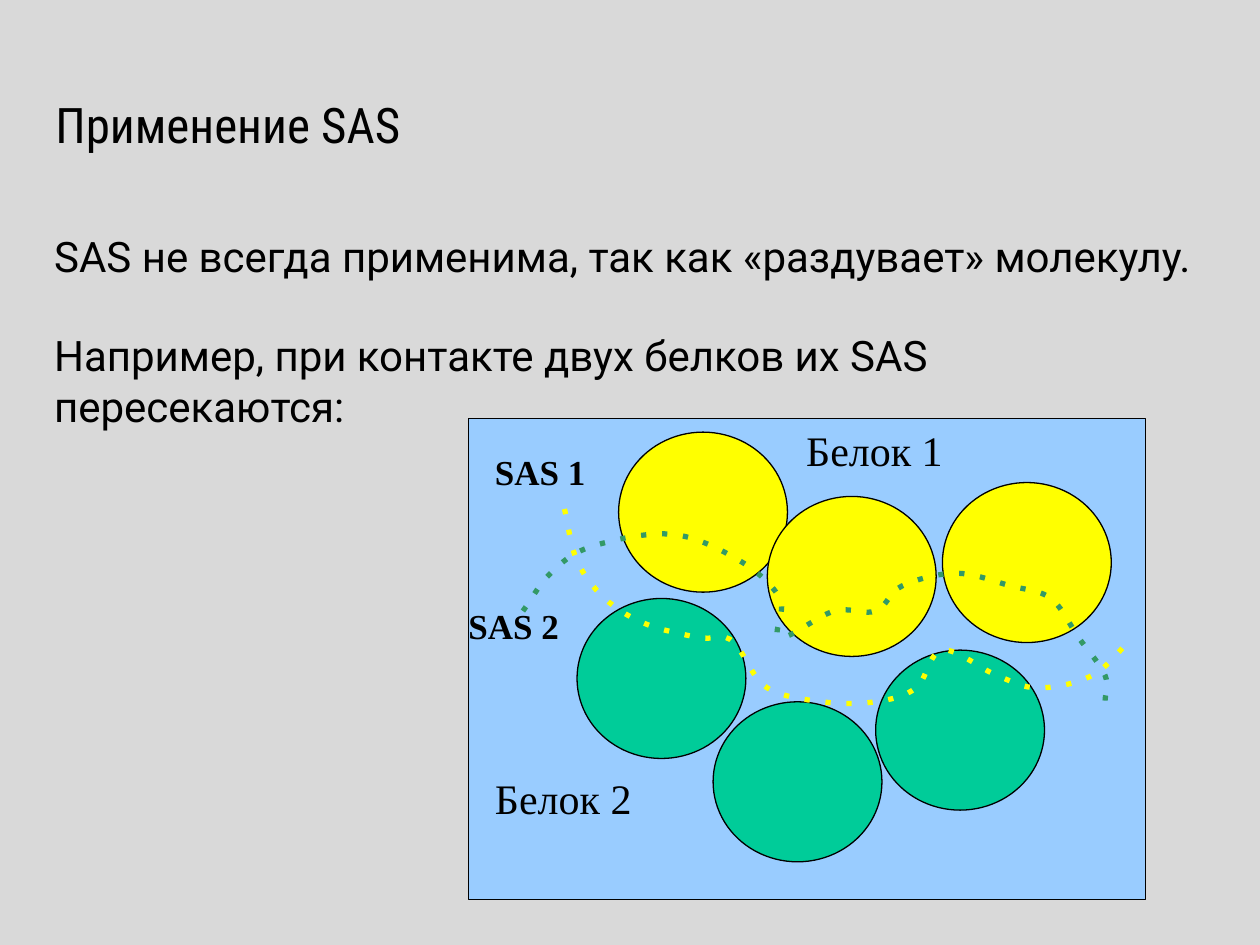
from lxml import etree
from pptx import Presentation
from pptx.dml.color import RGBColor
from pptx.enum.shapes import MSO_SHAPE
from pptx.enum.text import MSO_ANCHOR, MSO_AUTO_SIZE, PP_ALIGN
from pptx.oxml.ns import qn
from pptx.util import Inches, Pt

OVAL, RECTANGLE = MSO_SHAPE.OVAL, MSO_SHAPE.RECTANGLE
TOP, LEFT, NO_FIT = MSO_ANCHOR.TOP, PP_ALIGN.LEFT, MSO_AUTO_SIZE.NONE

COLORS = {
    "background": "D9D9D9",
    "text": "000000",
    "panel": "99CCFF",
    "protein 1": "FFFF00",
    "protein 2": "00CC99",
    "SAS 1": "FFFF00",
    "SAS 2": "339966",
}

# Diagram parts, in inches from the panel's corner
ATOM_SIZE = (1.34, 1.27)
ATOMS = [
    ("protein 2", [(0.86, 1.43), (3.23, 1.84), (1.94, 2.25)]),
    ("protein 1", [(1.19, 0.11), (2.37, 0.62), (3.76, 0.51)]),
]
SURFACES = [
    ("SAS 2", [(0.43, 1.53), (0.65, 1.23), (0.97, 1.02), (1.61, 0.92),
               (2.15, 1.13), (2.47, 1.43), (2.47, 1.74), (2.9, 1.53),
               (3.23, 1.53), (3.44, 1.33), (3.87, 1.23), (4.3, 1.33),
               (4.62, 1.43), (4.84, 1.74), (5.05, 2.04), (5.05, 2.25)]),
    ("SAS 1", [(0.76, 0.72), (0.86, 1.13), (1.08, 1.43), (1.4, 1.63),
               (1.83, 1.74), (2.04, 1.74), (2.15, 1.84), (2.37, 2.14),
               (2.8, 2.25), (3.23, 2.25), (3.55, 2.14), (3.76, 1.84),
               (4.19, 2.04), (4.52, 2.14), (4.95, 2.04), (5.27, 1.74)]),
]
LABELS = [
    ("Белок 1", 2.58, 0, 24, False),
    ("Белок 2", 0.11, 2.76, 24, False),
    ("SAS 1", 0.11, 0.21, 20, True),
    ("SAS 2", -0.1, 1.43, 20, True),
]


def color(name):
    return RGBColor.from_string(COLORS[name])


def place(shape, left, top, width, height):
    shape.left, shape.top = Inches(left), Inches(top)
    shape.width, shape.height = Inches(width), Inches(height)


def add_span(para, text, font, size, bold=False):
    span = para.add_run()
    span.text = text
    span.font.name = font
    span.font.size = Pt(size)
    span.font.bold = bold
    span.font.color.rgb = color("text")


def set_frame(frame, margin, wrap=True):
    frame.word_wrap = wrap
    frame.auto_size = NO_FIT
    frame.vertical_anchor = TOP
    frame.margin_left = frame.margin_right = Inches(0.1)
    frame.margin_top = frame.margin_bottom = Inches(margin)


def add_title(page, left, top, width, height):
    title = page.shapes.title
    place(title, left, top, width, height)
    set_frame(title.text_frame, 0.1)
    para = title.text_frame.paragraphs[0]
    para.alignment = LEFT
    add_span(para, "Применение SAS", "Roboto Condensed", 28)


def add_body(page, left, top, width, height, texts):
    body = page.placeholders[1]
    place(body, left, top, width, height)
    frame = body.text_frame
    set_frame(frame, 0.05)
    for index, text in enumerate(texts):
        para = frame.add_paragraph() if index else frame.paragraphs[0]
        para.alignment = LEFT
        para.space_before = Pt(28 if index else 0)
        properties = para._p.get_or_add_pPr()
        properties.set("marL", "0")
        properties.set("indent", "0")
        etree.SubElement(properties, qn("a:buNone"))
        add_span(para, text, "Roboto", 24)


def add_filled(group, kind, fill, left, top, width, height):
    shape = group.shapes.add_shape(
        kind, Inches(left), Inches(top), Inches(width), Inches(height))
    shape.shadow.inherit = False
    shape.fill.solid()
    shape.fill.fore_color.rgb = color(fill)
    shape.line.color.rgb = color("text")
    shape.line.width = Pt(0.75)


def smooth_path(shape, knots):
    """Turn straight segments into a Catmull-Rom curve through the knots."""
    def mirror(end, inner):
        return tuple(2 * a - b for a, b in zip(end, inner))

    chain = [mirror(knots[0], knots[1]), *knots, mirror(knots[-1], knots[-2])]
    segments = list(shape._element.iter(qn("a:lnTo")))
    for index, segment in enumerate(segments):
        before, start, end, after = chain[index:index + 4]
        first = [s + (e - b) / 6 for b, s, e in zip(before, start, end)]
        second = [e - (a - s) / 6 for s, e, a in zip(start, end, after)]
        curve = etree.Element(qn("a:cubicBezTo"))
        for x, y in (first, second, end):
            etree.SubElement(curve, qn("a:pt"), x=str(int(x - shape.left)),
                             y=str(int(y - shape.top)))
        segment.getparent().replace(segment, curve)


def add_surface(group, name, left, top, points):
    knots = [(Inches(left + x), Inches(top + y)) for x, y in points]
    builder = group.shapes.build_freeform(*knots[0])
    builder.add_line_segments(knots[1:], close=False)
    shape = builder.convert_to_shape()
    smooth_path(shape, knots)
    shape.shadow.inherit = False
    shape.fill.background()
    shape.line.color.rgb = color(name)
    shape.line.width = Pt(3)
    line = shape._element.spPr.find(qn("a:ln"))
    etree.SubElement(line, qn("a:prstDash"), val="dot")


def add_label(group, text, left, top, size, bold):
    box = group.shapes.add_textbox(
        Inches(left), Inches(top), Inches(1.34), Inches(0.64))
    set_frame(box.text_frame, 0.05, wrap=False)
    para = box.text_frame.paragraphs[0]
    para.alignment = LEFT
    add_span(para, text, "Times New Roman", size, bold)


def add_diagram(page, left, top, width, height):
    group = page.shapes.add_group_shape()
    add_filled(group, RECTANGLE, "panel", left, top, width, height)
    # Atoms of the two proteins
    for protein, corners in ATOMS:
        for x, y in corners:
            add_filled(group, OVAL, protein, left + x, top + y, *ATOM_SIZE)
    # Dotted accessible surfaces
    for name, points in SURFACES:
        add_surface(group, name, left, top, points)
    for text, x, y, size, bold in LABELS:
        add_label(group, text, left + x, top + y, size, bold)


def main():
    deck = Presentation()
    deck.slide_width, deck.slide_height = Inches(10), Inches(7.5)
    page = deck.slides.add_slide(deck.slide_layouts[1])
    page.background.fill.solid()
    page.background.fill.fore_color.rgb = color("background")
    add_title(page, 0.34, 0.65, 9.32, 0.83)
    add_body(page, 0.33, 1.78, 9.33, 3.12, [
        "SAS не всегда применима, так как «раздувает» молекулу.",
        "Например, при контакте двух белков их SAS пересекаются:",
    ])
    add_diagram(page, 3.72, 3.32, 5.37, 3.82)
    deck.save("out.pptx")


if __name__ == "__main__":
    main()
